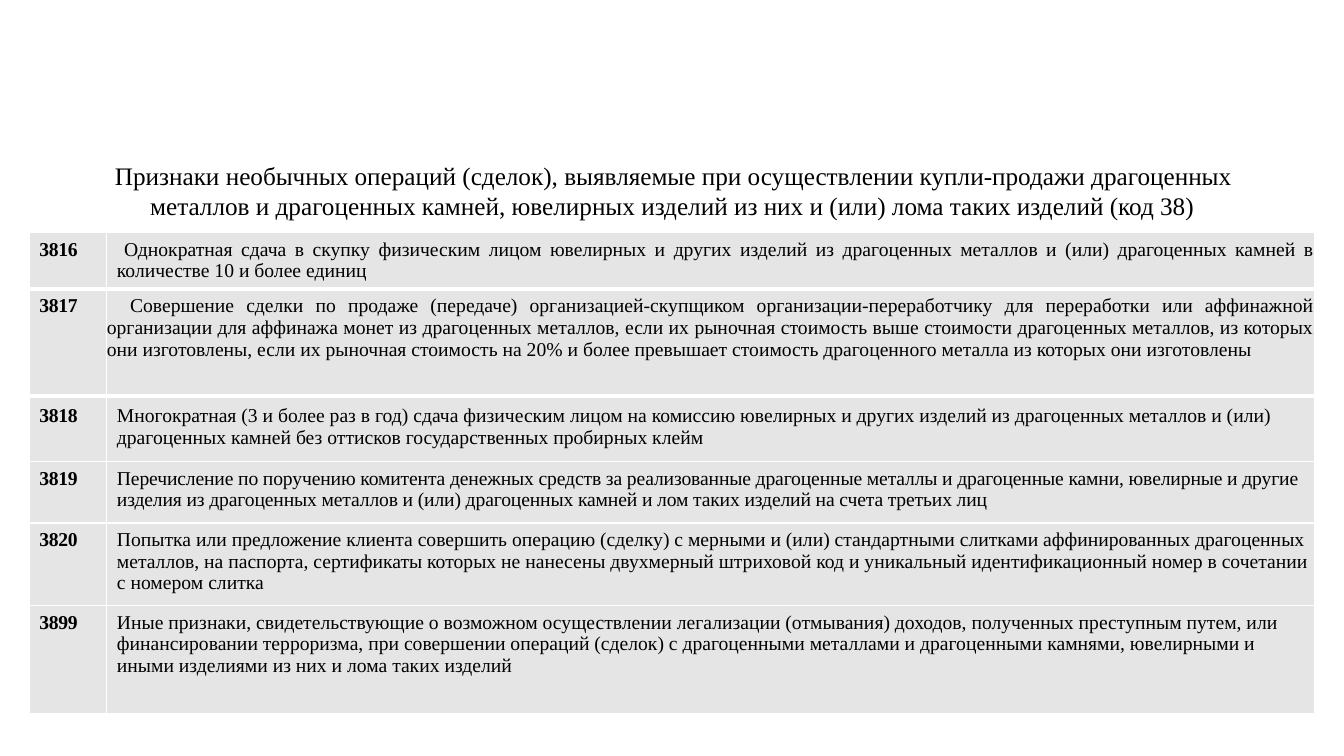
from lxml import etree
from pptx import Presentation
from pptx.dml.color import RGBColor
from pptx.enum.text import MSO_ANCHOR, PP_ALIGN
from pptx.oxml.ns import qn
from pptx.util import Inches, Pt

LEFT, JUSTIFY = PP_ALIGN.LEFT, PP_ALIGN.JUSTIFY
TOP = MSO_ANCHOR.TOP
BLACK = RGBColor(0x00, 0x00, 0x00)
WHITE = RGBColor(0xFF, 0xFF, 0xFF)
GREY = RGBColor(0xE6, 0xE5, 0xE5)

TITLE = (
    "Признаки необычных операций (сделок), выявляемые при осуществлении купли-продажи драгоценных "
    "металлов и драгоценных камней, ювелирных изделий из них и (или) лома таких изделий (код 38)"
)
COLUMN_WIDTHS = (0.77, 11.98)
SIGNS = [
    {"code": "3816", "height": 0.56, "inset": 0.06, "rule": 3,
     "format": {"alignment": JUSTIFY, "margin": 0.1, "indent": 0.07},
     "text": "Однократная сдача в скупку физическим лицом ювелирных и других изделий из драгоценных "
             "металлов и (или) драгоценных камней в\vколичестве 10 и более единиц"},
    {"code": "3817", "height": 1.06, "inset": 0.06, "rule": 3,
     "format": {"alignment": JUSTIFY, "margin": 0, "indent": 0.23},
     "text": "Совершение сделки по продаже (передаче) организацией-скупщиком "
             "организации-переработчику для переработки или аффинажной организации для аффинажа монет "
             "из драгоценных металлов, если их рыночная стоимость выше стоимости драгоценных металлов, "
             "из которых они изготовлены, если их рыночная стоимость на 20% и более превышает стоимость "
             "драгоценного металла из которых они изготовлены"},
    {"code": "3818", "height": 0.65, "inset": 0.09, "rule": 1,
     "format": {},
     "text": "Многократная (3 и более раз в год) сдача физическим лицом на комиссию ювелирных и других "
             "изделий из драгоценных металлов и (или) драгоценных камней без оттисков государственных "
             "пробирных клейм"},
    {"code": "3819", "height": 0.61, "inset": 0.06, "rule": 1,
     "format": {"spacing": -0.1},
     "text": "Перечисление по поручению комитента денежных средств за реализованные драгоценные металлы "
             "и драгоценные камни, ювелирные и другие\vизделия из драгоценных металлов и (или) "
             "драгоценных камней и лом таких изделий на счета третьих лиц"},
    {"code": "3820", "height": 0.82, "inset": 0.06, "rule": 1,
     "format": {},
     "text": "Попытка или предложение клиента совершить операцию (сделку) с мерными и (или) "
             "стандартными слитками аффинированных драгоценных металлов, на паспорта, сертификаты "
             "которых не нанесены двухмерный штриховой код и уникальный идентификационный номер в "
             "сочетании с номером слитка"},
    {"code": "3899", "height": 1.07, "inset": 0.06, "rule": 1,
     "format": {},
     "text": "Иные признаки, свидетельствующие о возможном осуществлении легализации (отмывания) "
             "доходов, полученных преступным путем, или финансировании терроризма, при совершении "
             "операций (сделок) с драгоценными металлами и драгоценными камнями, ювелирными и иными "
             "изделиями из них и лома таких изделий"},
]


class SlideBuilder:
    """Holds the text style and the current slide and adds its elements."""

    font = {"name": "Times New Roman", "size": Pt(14), "bold": False}

    def __init__(self, slide):
        self.slide = slide

    def set_text(self, frame, text, alignment=LEFT, margin=0.1, indent=0, spacing=0, **font):
        """Puts one styled paragraph into a text frame."""
        paragraph = frame.paragraphs[0]
        paragraph.text = text
        paragraph.alignment = alignment
        properties = paragraph._p.get_or_add_pPr()
        properties.set("marL", str(Inches(margin)))
        properties.set("indent", str(Inches(indent)))
        for run in paragraph.runs:
            for name, value in {**self.font, **font}.items():
                setattr(run.font, name, value)
            run.font.color.rgb = BLACK
            if spacing:
                run._r.get_or_add_rPr().set("spc", str(round(spacing * 100)))

    def add_title(self, text, left, top, width, height):
        """Adds the heading with a hanging indent."""
        frame = self.slide.shapes.add_textbox(
            Inches(left), Inches(top), Inches(width), Inches(height)).text_frame
        settings = {"word_wrap": True, "vertical_anchor": TOP, "margin_left": 0,
                    "margin_top": Inches(0.01), "margin_right": 0, "margin_bottom": 0}
        for name, value in settings.items():
            setattr(frame, name, value)
        self.set_text(frame, text, margin=0.36, indent=-0.35, size=Pt(18))

    def add_borders(self, cell, top, bottom):
        """Draws white borders around a cell, with widths in points."""
        properties = cell._tc.get_or_add_tcPr()
        widths = {"a:lnL": 1, "a:lnR": 1, "a:lnT": top, "a:lnB": bottom}
        for position, (tag, width) in enumerate(widths.items()):
            line = etree.Element(qn(tag), w=str(Pt(width)))
            fill = etree.SubElement(line, qn("a:solidFill"))
            etree.SubElement(fill, qn("a:srgbClr"), val=str(WHITE))
            properties.insert(position, line)

    def fill_cell(self, cell, text, inset, top, bottom, **style):
        """Sets the text, margins, fill and borders of a cell."""
        settings = {"margin_left": 0, "margin_top": Inches(inset), "margin_right": 0,
                    "margin_bottom": 0, "vertical_anchor": TOP}
        for name, value in settings.items():
            setattr(cell, name, value)
        cell.fill.solid()
        cell.fill.fore_color.rgb = GREY
        self.add_borders(cell, top, bottom)
        self.set_text(cell.text_frame, text, **style)

    def add_sign_table(self, signs, left, top):
        """Adds the table of codes and signs."""
        height = sum(sign["height"] for sign in signs)
        table = self.slide.shapes.add_table(
            len(signs), len(COLUMN_WIDTHS), Inches(left), Inches(top),
            Inches(sum(COLUMN_WIDTHS)), Inches(height)).table
        table.first_row = table.horz_banding = False
        for column, width in zip(table.columns, COLUMN_WIDTHS):
            column.width = Inches(width)
        rule_above = 1
        for row, sign in zip(table.rows, signs):
            row.height = Inches(sign["height"])
            code_cell, text_cell = row.cells
            edges = {"inset": sign["inset"], "top": rule_above, "bottom": sign["rule"]}
            self.fill_cell(code_cell, sign["code"], **edges, bold=True, spacing=-0.2)
            self.fill_cell(text_cell, sign["text"], **edges, **sign["format"])
            rule_above = sign["rule"]


def main():
    """Builds the slide and saves the presentation."""
    presentation = Presentation()
    presentation.slide_width = Inches(13.33)
    presentation.slide_height = Inches(7.5)
    builder = SlideBuilder(presentation.slides.add_slide(presentation.slide_layouts[6]))
    builder.add_title(TITLE, 1.13, 1.58, 11.12, 1.02)
    builder.add_sign_table(SIGNS, 0.29, 2.31)
    presentation.save("out.pptx")


if __name__ == "__main__":
    main()
